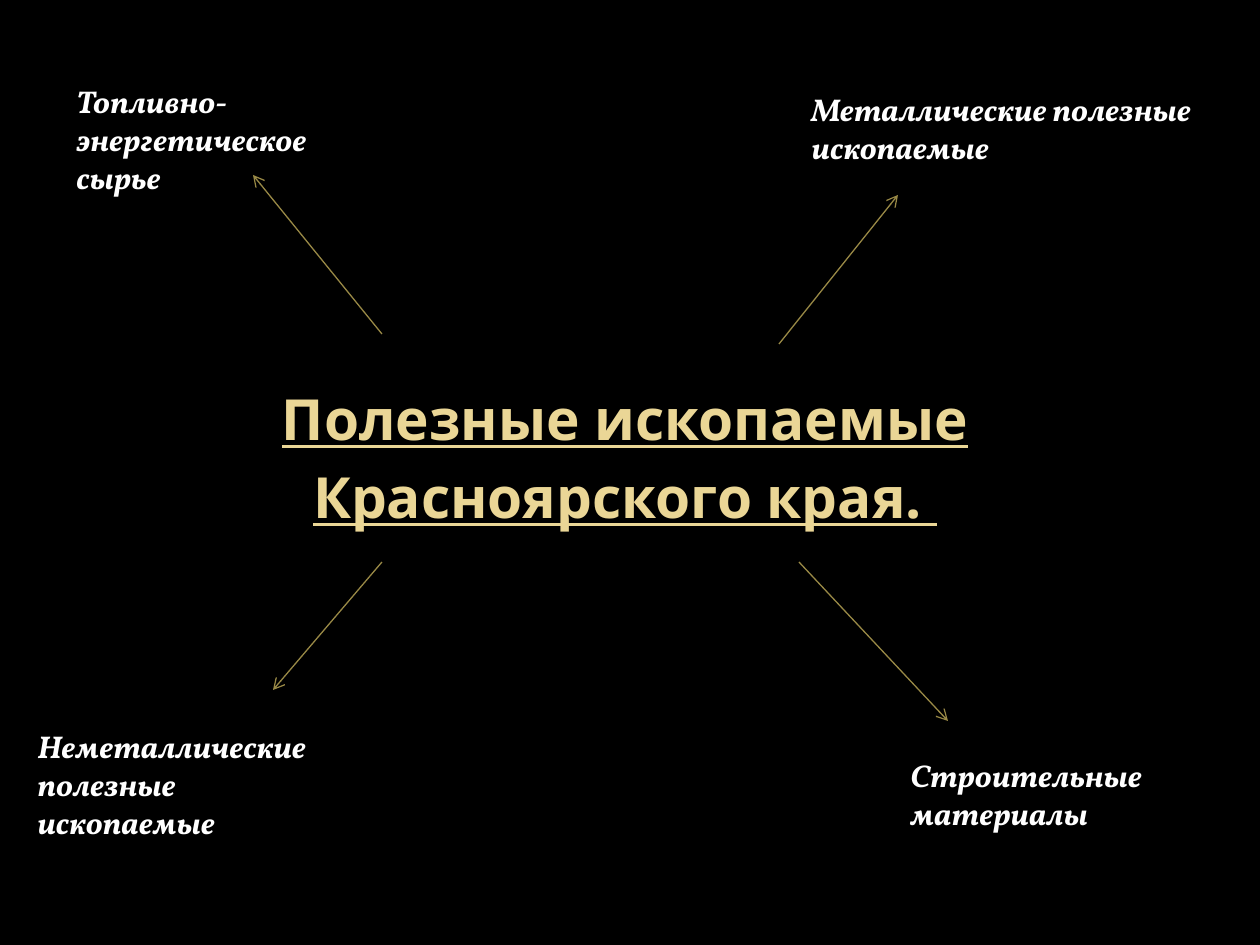
from lxml import etree
from pptx import Presentation
from pptx.dml.color import RGBColor
from pptx.enum.shapes import MSO_CONNECTOR
from pptx.enum.text import MSO_ANCHOR, MSO_AUTO_SIZE, PP_ALIGN
from pptx.oxml.ns import qn
from pptx.util import Pt

PX = 914400 / 126
BLACK = RGBColor(0x00, 0x00, 0x00)
WHITE = RGBColor(0xFF, 0xFF, 0xFF)
GOLD = RGBColor(0xEA, 0xD6, 0x96)
DARK_GOLD = RGBColor(0x99, 0x89, 0x46)
STRAIGHT = MSO_CONNECTOR.STRAIGHT
MIDDLE = MSO_ANCHOR.MIDDLE
NO_FIT = MSO_AUTO_SIZE.NONE
GROW = MSO_AUTO_SIZE.SHAPE_TO_FIT_TEXT
CENTER = PP_ALIGN.CENTER
TITLE_ONLY = 5

# Label, its box (left, top, width, height), arrow start and arrow end
BRANCHES = [
    ("Топливно-энергетическое сырье", (64, 76, 338, 165), (382, 334), (253, 175)),
    ("Металлические полезные ископаемые", (799, 84, 412, 89), (779, 344), (898, 195)),
    ("Неметаллические полезные ископаемые", (25, 721, 338, 127), (382, 562), (273, 690)),
    ("Строительные материалы", (898, 750, 263, 127), (799, 562), (948, 721)),
]


def emu(*lengths):
    return [round(length * PX) for length in lengths]


def apply(target, values):
    for name, value in values.items():
        setattr(target, name, value)


class MindMap:
    """Holds the style of the map and the slide it is drawn on."""

    title_font = {"name": "Open Sans", "size": Pt(32.4), "bold": True, "underline": True}
    title_frame = {"auto_size": NO_FIT, "vertical_anchor": MIDDLE, "word_wrap": True}
    title_paragraph = {"alignment": CENTER, "line_spacing": 1.15, "space_after": Pt(10)}
    label_font = {"name": "Vollkorn", "size": Pt(18), "bold": True, "italic": True}
    label_frame = {"word_wrap": True, "auto_size": GROW}

    def __init__(self, slide):
        self.slide = slide
        background = slide.background.fill
        background.solid()
        background.fore_color.rgb = BLACK

    def add_wording(self, frame, wording, font, color):
        paragraph = frame.paragraphs[0]
        run = paragraph.add_run()
        run.text = wording
        apply(run.font, font)
        run.font.color.rgb = color
        return paragraph

    def title(self, wording, box):
        heading = self.slide.shapes.title
        apply(heading, dict(zip(("left", "top", "width", "height"), emu(*box))))
        apply(heading.text_frame, self.title_frame)
        paragraph = self.add_wording(heading.text_frame, wording, self.title_font, GOLD)
        apply(paragraph, self.title_paragraph)

    def label(self, wording, box):
        frame = self.slide.shapes.add_textbox(*emu(*box)).text_frame
        apply(frame, self.label_frame)
        self.add_wording(frame, wording, self.label_font, WHITE)

    def arrow(self, start, end):
        connector = self.slide.shapes.add_connector(STRAIGHT, *emu(*start, *end))
        connector.line.color.rgb = DARK_GOLD
        connector.line.width = Pt(0.75)
        properties = connector._element.spPr
        outline = properties.find(qn("a:ln"))
        etree.SubElement(outline, qn("a:tailEnd"), type="arrow")
        etree.SubElement(properties, qn("a:effectLst"))


def main():
    presentation = Presentation()
    presentation.slide_width, presentation.slide_height = emu(1260, 945)
    layout = presentation.slide_layouts[TITLE_ONLY]
    mind_map = MindMap(presentation.slides.add_slide(layout))
    mind_map.title("Полезные ископаемые Красноярского края. ", (164, 373, 922, 158))
    for wording, box, start, end in BRANCHES:
        mind_map.label(wording, box)
        mind_map.arrow(start, end)
    presentation.save("out.pptx")


if __name__ == "__main__":
    main()
